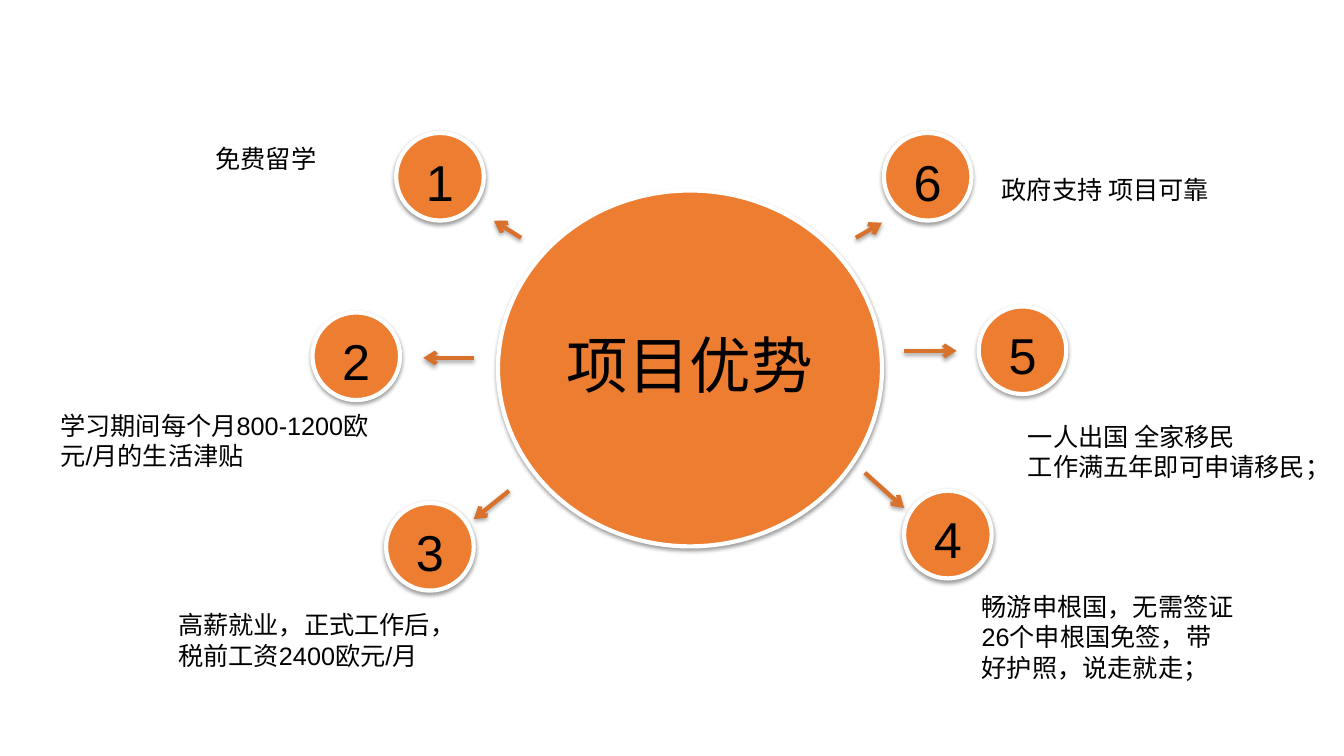
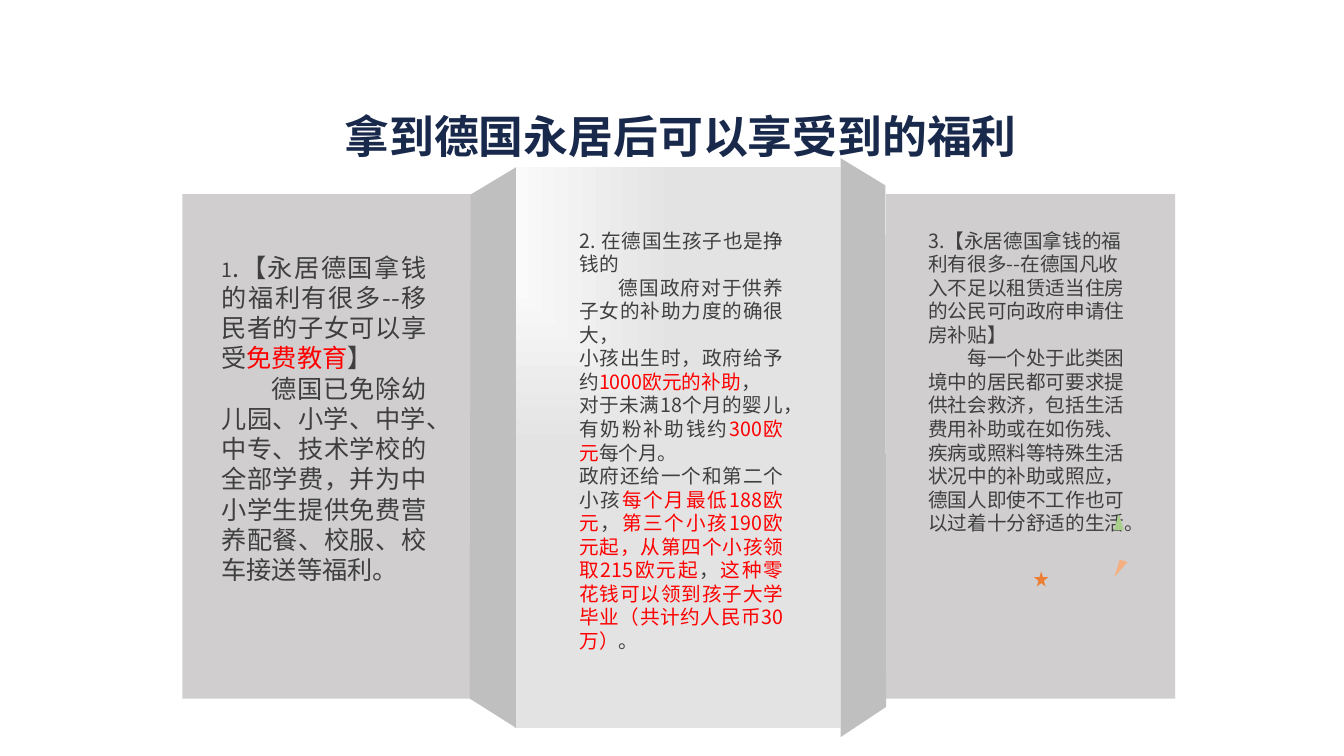
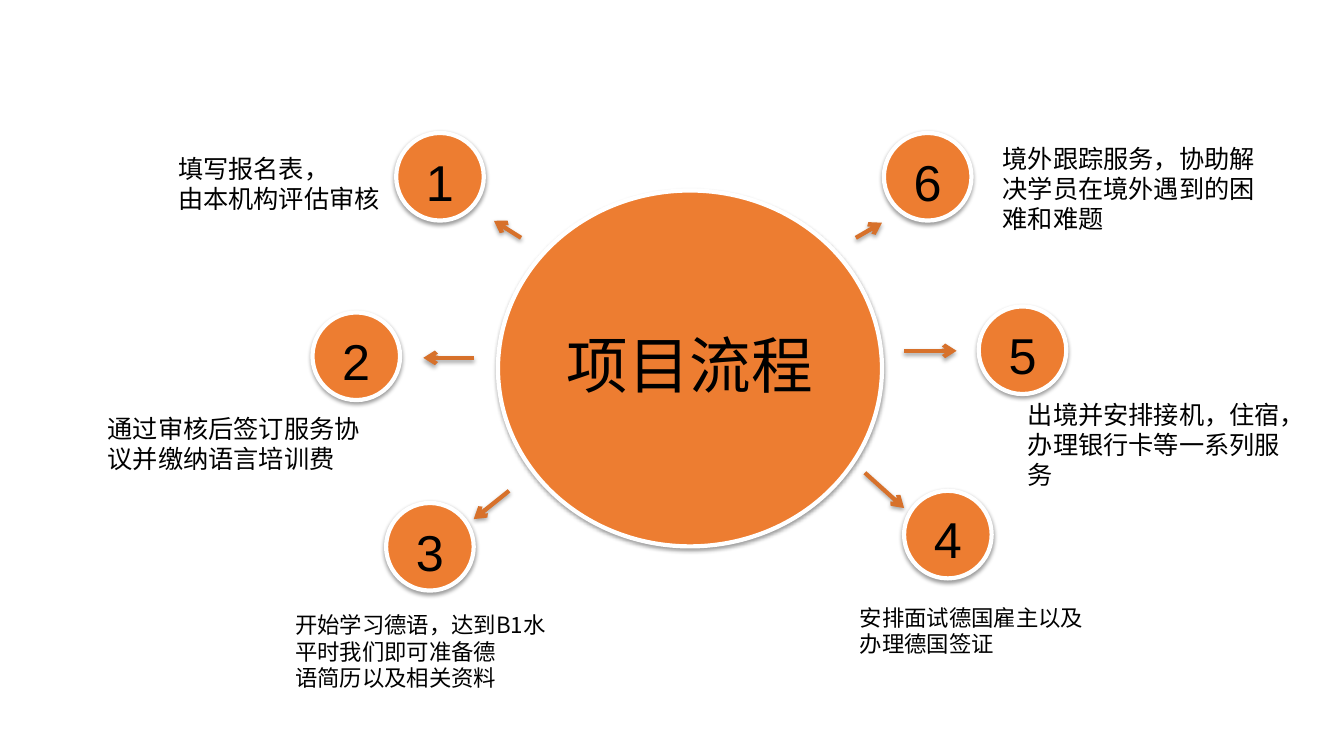
from dataclasses import dataclass

from lxml import etree
from pptx import Presentation
from pptx.dml.color import RGBColor
from pptx.enum import shapes, text
from pptx.oxml.ns import qn
from pptx.util import Pt

ARIAL = "Arial"
HEITI = "Noto Sans CJK SC"
BLACK, WHITE, RED = "000000", "FFFFFF", "FF0000"
ORANGE, ARROW_ORANGE = "ED7D31", "D7712B"
NAVY, BODY_GREY = "19294B", "3F3F3F"
PANEL_GREY, FOLD_GREY = "D0CECE", "BFBFBF"
LINE_PITCH = 1.2


@dataclass(frozen=True)
class Box:
    left: float
    top: float
    width: float
    height: float

    def emu(self) -> tuple:
        return Pt(self.left), Pt(self.top), Pt(self.width), Pt(self.height)


@dataclass(frozen=True)
class Run:
    text: str
    color: str | None = None
    size: float | None = None
    font: str | None = None


@dataclass(frozen=True)
class Para:
    runs: tuple[Run, ...]
    indented: bool = False


@dataclass(frozen=True)
class Style:
    size: float
    font: str = ARIAL
    color: str = BLACK
    bold: bool = False
    align: text.PP_ALIGN = text.PP_ALIGN.LEFT
    pitch: float = LINE_PITCH


@dataclass(frozen=True)
class Label:
    box: Box
    paragraphs: tuple[Para, ...]
    style: Style


@dataclass(frozen=True)
class Step:
    """A numbered circle and the arrow that points to it."""
    number: int
    left: float
    top: float
    arrow: tuple[float, float, float, float]


NOTE = Style(18)
SMALL_NOTE = Style(16)
NUMBER = Style(36, align=text.PP_ALIGN.CENTER)
HUB = Style(44, align=text.PP_ALIGN.CENTER)
TITLE = Style(32, HEITI, NAVY, bold=True, pitch=1.28)
BODY = Style(14, HEITI, BODY_GREY)
JUSTIFIED = Style(14, HEITI, BODY_GREY, align=text.PP_ALIGN.JUSTIFY)
LARGE_JUSTIFIED = Style(18, HEITI, BODY_GREY, align=text.PP_ALIGN.JUSTIFY)

CIRCLE_SIZE = 62.6
HUB_BOX = Box(355.7, 136.1, 274.3, 254.2)
STEPS = (
    Step(1, 283, 95, (372.2, 169.9, 352.8, 157.7)),
    Step(2, 223.2, 223.2, (338.4, 255.6, 302.4, 255.6)),
    Step(3, 275.8, 359.3, (363.6, 350.6, 338.4, 370.8)),
    Step(4, 645.8, 350.6, (617.8, 337.7, 645.8, 362.9)),
    Step(5, 699.1, 218.9, (645.8, 250.6, 683.3, 250.6)),
    Step(6, 631.4, 95, (611.3, 169.9, 630, 159.1)),
)


def rgb(color: str) -> RGBColor:
    return RGBColor.from_string(color)


def para(*runs: str | Run, indented: bool = False) -> Para:
    return Para(tuple(Run(run) if isinstance(run, str) else run for run in runs), indented)


def note(box: Box, *lines: str | Para, style: Style = NOTE) -> Label:
    return Label(box, tuple(para(line) if isinstance(line, str) else line for line in lines), style)


def red(words: str) -> Run:
    return Run(words, RED)


def write(frame, paragraphs: tuple[Para, ...], style: Style) -> None:
    frame.word_wrap = True
    frame.vertical_anchor = text.MSO_ANCHOR.TOP
    for index, content in enumerate(paragraphs):
        paragraph = frame.add_paragraph() if index else frame.paragraphs[0]
        paragraph.alignment = style.align
        paragraph.line_spacing = Pt(style.size * style.pitch)
        if content.indented:
            paragraph._p.get_or_add_pPr().set("indent", str(Pt(2 * style.size)))
        font = paragraph.font
        font.size, font.name, font.bold = Pt(style.size), style.font, style.bold
        font.color.rgb = rgb(style.color)
        etree.SubElement(font._element, qn("a:ea")).set("typeface", HEITI)
        for part in content.runs:
            run = paragraph.add_run()
            run.text = part.text
            if part.color:
                run.font.color.rgb = rgb(part.color)
            if part.size:
                run.font.size = Pt(part.size)
            if part.font:
                run.font.name = part.font


def add_label(slide, label: Label) -> None:
    frame = slide.shapes.add_textbox(*label.box.emu()).text_frame
    write(frame, label.paragraphs, label.style)
    frame.auto_size = text.MSO_AUTO_SIZE.SHAPE_TO_FIT_TEXT


def paint(shape, color: str) -> None:
    """Flat fill with neither outline nor shadow."""
    shape.fill.solid()
    shape.fill.fore_color.rgb = rgb(color)
    shape.line.fill.background()
    shape.shadow.inherit = False


def add_flat(slide, kind: shapes.MSO_SHAPE, box: Box, color: str, rotation: float = 0):
    shape = slide.shapes.add_shape(kind, *box.emu())
    paint(shape, color)
    shape.rotation = rotation
    return shape


def add_shadow(shape, distance: float, opacity: int) -> None:
    """Soft shadow straight below; needs fill and line to be set already."""
    effects = etree.SubElement(shape._element.spPr, qn("a:effectLst"))
    shadow = etree.SubElement(effects, qn("a:outerShdw"), blurRad=str(Pt(3.1)),
                              dist=str(Pt(distance)), dir="5400000", rotWithShape="0")
    color = etree.SubElement(shadow, qn("a:srgbClr"), val=BLACK)
    etree.SubElement(color, qn("a:alpha"), val=str(opacity * 1000))


def add_disc(slide, box: Box, words: str, style: Style, text_top: float) -> None:
    disc = slide.shapes.add_shape(shapes.MSO_SHAPE.OVAL, *box.emu())
    disc.fill.solid()
    disc.fill.fore_color.rgb = rgb(ORANGE)
    disc.line.color.rgb = rgb(WHITE)
    disc.line.width = Pt(3)
    add_shadow(disc, 1.6, 38)
    frame = disc.text_frame
    frame.margin_left = frame.margin_right = frame.margin_bottom = 0
    frame.margin_top = Pt(text_top)
    write(frame, (para(words),), style)


def add_arrow(slide, ends: tuple[float, float, float, float]) -> None:
    arrow = slide.shapes.add_connector(shapes.MSO_CONNECTOR.STRAIGHT, *map(Pt, ends))
    arrow.line.color.rgb = rgb(ARROW_ORANGE)
    arrow.line.width = Pt(3)
    etree.SubElement(arrow.line._get_or_add_ln(), qn("a:tailEnd"), type="arrow")
    add_shadow(arrow, 1.8, 35)


def add_fold(slide, points: tuple[tuple[float, float], ...]) -> None:
    corners = [(Pt(x), Pt(y)) for x, y in points]
    builder = slide.shapes.build_freeform(*corners[0], scale=1.0)
    builder.add_line_segments(corners[1:], close=True)
    paint(builder.convert_to_shape(), FOLD_GREY)


def add_lit_panel(slide, box: Box) -> None:
    """Panel whose gradient starts in the upper left corner."""
    panel = add_flat(slide, shapes.MSO_SHAPE.RECTANGLE, box, PANEL_GREY)
    panel.fill.gradient()
    for stop, color, position in zip(panel.fill.gradient_stops, ("FAFAFA", "E3E3E3"), (0, 1)):
        stop.color.rgb = rgb(color)
        stop.position = position
    gradient = panel._element.spPr.find(qn("a:gradFill"))
    linear = gradient.find(qn("a:lin"))
    path = etree.Element(qn("a:path"), path="rect")
    etree.SubElement(path, qn("a:fillToRect"), r="100000", b="100000")
    gradient.replace(linear, path)


def build_wheel(slide, hub: str, labels: tuple[Label, ...]) -> None:
    for label in labels:
        add_label(slide, label)
    for step in STEPS:
        add_arrow(slide, step.arrow)
    for step in STEPS:
        box = Box(step.left, step.top, CIRCLE_SIZE, CIRCLE_SIZE)
        add_disc(slide, box, str(step.number), NUMBER, 3.6)
    add_disc(slide, HUB_BOX, hub, HUB, 60)


ADVANTAGES = (
    note(Box(146.9, 98.6, 214.6, 28.8), "免费留学"),
    note(Box(36, 289.4, 238.3, 51.1), "学习期间每个月800-1200欧元/月的生活津贴"),
    note(Box(120.2, 432, 200.2, 51.1), "高薪就业，正式工作后，税前工资2400欧元/月"),
    note(Box(694.1, 419, 200.2, 72.7),
         "畅游申根国，无需签证", "26个申根国免签，带", "好护照，说走就走；"),
    note(Box(727.2, 297.4, 244.8, 51.1), "一人出国 全家移民", "工作满五年即可申请移民；"),
    note(Box(708.5, 121, 244.8, 28.8), "政府支持 项目可靠"),
)

PROCESS = (
    note(Box(120.2, 105.8, 165.6, 50.4), "填写报名表，", "由本机构评估审核"),
    note(Box(69.8, 291.6, 238.3, 50.4), "通过审核后签订服务协", "议并缴纳语言培训费"),
    note(Box(203.8, 432.7, 200.2, 65.5),
         para("开始学习德语，达到", Run("B1", font=HEITI), "水平时我们即可准备德"),
         "语简历以及相关资料", style=SMALL_NOTE),
    note(Box(607, 427.7, 200.2, 45.4),
         "安排面试德国雇主以及", "办理德国签证", style=SMALL_NOTE),
    note(Box(727.2, 281.5, 200.2, 72.7), "出境并安排接机，住宿，办理银行卡等一系列服务"),
    note(Box(709.2, 98.6, 263.5, 72),
         "境外跟踪服务，协助解", "决学员在境外遇到的困", "难和难题"),
)

BENEFITS = (
    note(Box(239, 71.3, 495.4, 48.2), "拿到德国永居后可以享受到的福利", style=TITLE),
    note(Box(151.2, 176.4, 160.6, 247),
         para(Run("1", size=14), ".【永居德国拿钱的福利有很多--移民者的子女可以享受",
              red("免费教育"), "】"),
         para("德国已免除幼儿园、小学、中学、中专、技术学校的全部学费，"
              "并为中小学生提供免费营养配餐、校服、校车接送等福利。", indented=True),
         style=LARGE_JUSTIFIED),
    note(Box(406.8, 159.8, 159.8, 312.5),
         "2. 在德国生孩子也是挣钱的",
         para("德国政府对于供养子女的补助力度的确很大，", indented=True),
         para("小孩出生时，政府给予约", red("1000欧元的补助"), "，"),
         para("对于未满18个月的婴儿，有奶粉补助钱约", red("300欧元"), "每个月。"),
         para("政府还给一个和第二个小孩", red("每个月最低188欧元"), "，",
              red("第三个小孩190欧元起，从第四个小孩领取215欧元起"), "，",
              red("这种零花钱可以领到孩子大学毕业（共计约人民币30万）"), "。"),
         style=JUSTIFIED),
    note(Box(655.9, 159.8, 159.8, 227.5),
         "3.【永居德国拿钱的福利有很多--在德国凡收入不足以租赁适当住房的公民可向政府申请住房补贴】",
         para("每一个处于此类困境中的居民都可要求提供社会救济，包括生活费用补助或在如伤残、"
              "疾病或照料等特殊生活状况中的补助或照应，德国人即使不工作也可以过着十分舒适的生活。",
              indented=True),
         style=BODY),
)


def build_benefits(slide) -> None:
    add_lit_panel(slide, Box(367.2, 119.5, 233.3, 400.3))
    for left in (130.3, 632.9):
        add_flat(slide, shapes.MSO_SHAPE.RECTANGLE, Box(left, 138.6, 206.6, 360.4), PANEL_GREY)
    add_fold(slide, ((368.4, 519.8), (368.4, 119.6), (336.2, 139), (335.5, 499)))
    add_fold(slide, ((600.5, 526.5), (600.5, 113), (632.5, 132.5), (632.9, 505)))
    for label in BENEFITS:
        add_label(slide, label)
    add_flat(slide, shapes.MSO_SHAPE.ISOSCELES_TRIANGLE, Box(795.6, 367.2, 7.2, 11.5), "A8D08C")
    add_flat(slide, shapes.MSO_SHAPE.STAR_5_POINT, Box(738.7, 408.2, 10.1, 10.8), ORANGE)
    add_flat(slide, shapes.MSO_SHAPE.RIGHT_TRIANGLE, Box(794.2, 403.9, 13, 5.8), "F4B081", 107.3)


def main() -> None:
    presentation = Presentation()
    presentation.slide_width, presentation.slide_height = Pt(960), Pt(540)
    blank = presentation.slide_layouts[6]
    advantages, benefits, process = (presentation.slides.add_slide(blank) for _ in range(3))
    build_wheel(advantages, "项目优势", ADVANTAGES)
    build_benefits(benefits)
    build_wheel(process, "项目流程", PROCESS)
    presentation.save("out.pptx")


if __name__ == "__main__":
    main()
